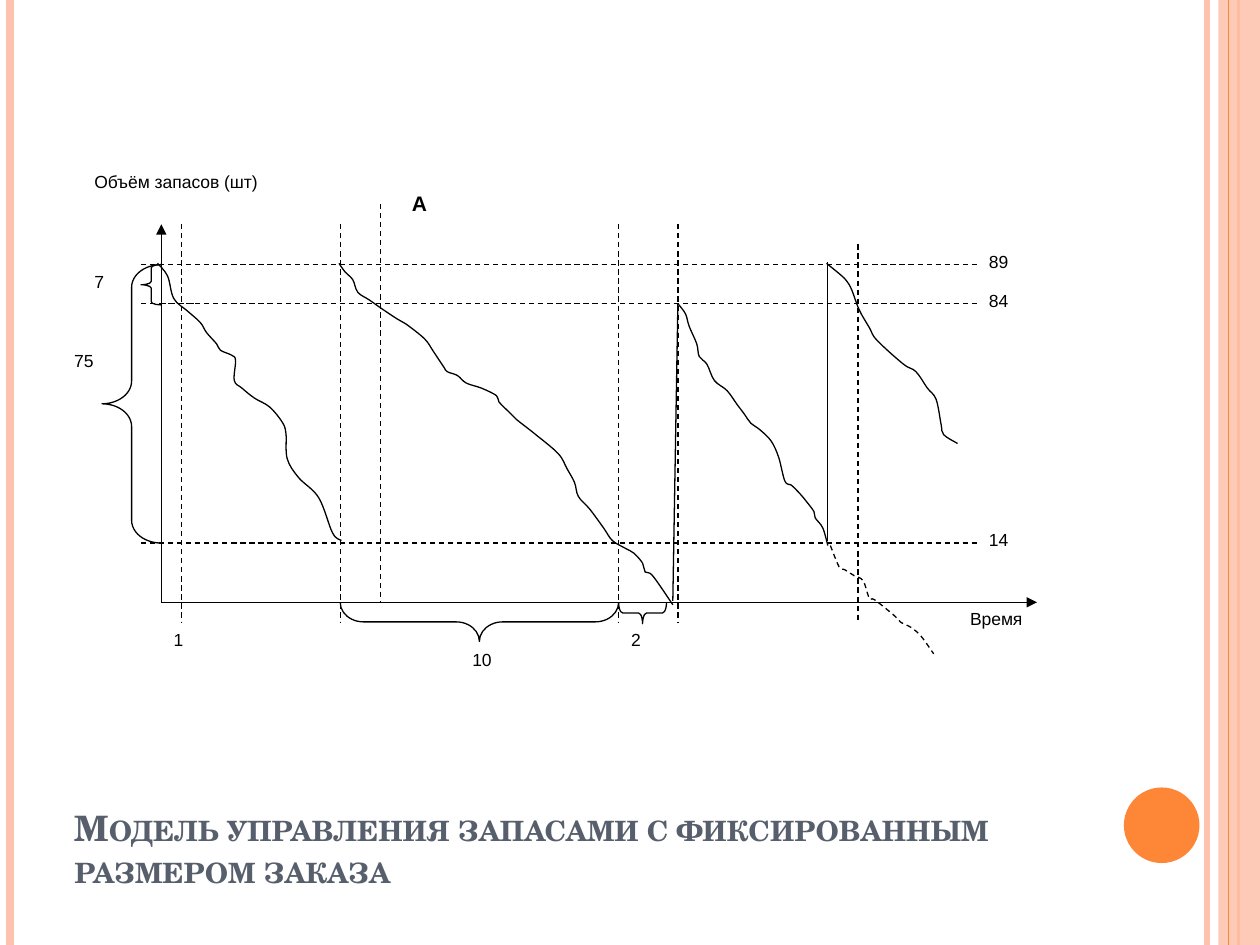
from dataclasses import dataclass

from lxml import etree
from pptx import Presentation
from pptx.dml.color import RGBColor
from pptx.enum import dml, shapes, text
from pptx.oxml import ns
from pptx.util import Inches, Pt

COLORS = {"ink": "000000", "title": "575F6D", "orange": "FE8637", "peach": "FEC3AE"}
Point = tuple[float, float]


@dataclass
class Line:
    start: Point
    end: Point
    color: str = "ink"
    width: float = 0.75
    dashed: bool = False
    arrow: bool = False


@dataclass
class Brace:
    left: float
    top: float
    width: float
    height: float
    curl: float
    points_down: bool = False


@dataclass
class Label:
    content: str
    left: float
    top: float
    width: float = 0.47
    height: float = 0.32
    size: int = 10
    bold: bool = False


@dataclass
class Curve:
    points: list[Point]
    dashed: bool = False


# Levels of the chart
BASE, REORDER, AFTER_ORDER, FULL = 4.78, 4.31, 2.41, 2.10
AXIS_X = 1.28

STRIPES = [
    Line((9.58, 0), (9.58, 7.5), "peach", 3),
    Line((0.08, 0), (0.08, 7.5), "peach", 4.5),
    Line((9.83, 0), (9.83, 7.5), "orange", 1.5),
]
AXES = [
    Line((AXIS_X, BASE), (AXIS_X, 1.78), arrow=True),
    Line((AXIS_X, BASE), (8.23, BASE), arrow=True),
]
VERTICALS = [(1.44, 1.78, 4.94), (2.7, 1.78, 4.94), (3.02, 1.62, BASE),
             (4.91, 1.78, 4.94), (5.38, 1.78, 4.94), (6.81, 1.94, 4.94)]
GUIDES = [Line((x, top), (x, bottom), dashed=True) for x, top, bottom in VERTICALS]
GUIDES += [Line((1.12, y), (7.75, y), dashed=True) for y in (REORDER, FULL, AFTER_ORDER)]
GUIDES.append(Line((AXIS_X, AFTER_ORDER), (1.59, AFTER_ORDER), dashed=True))
DELIVERIES = [Line((5.34, 4.77), (5.38, AFTER_ORDER)), Line((6.57, 4.29), (6.57, 2.08))]

BRACES = [
    Brace(0.81, FULL, 0.47, 2.21, 0.383),
    Brace(1.12, FULL, 0.16, 0.32, 0.165),
    Brace(2.7, BASE, 2.21, 0.31, 0.595, points_down=True),
    Brace(4.91, BASE, 0.38, 0.17, 0.191, points_down=True),
]

LABELS = [
    Label("7", 0.65, 2.1),
    Label("75", 0.49, 2.73, height=0.47),
    Label("10", 3.65, 5.1, height=0.47),
    Label("2", 4.91, 4.94, 0.32),
    Label("Время", 7.6, 4.78, 0.95),
    Label("Объём запасов (шт)", 0.65, 1.31, 2.37),
    Label("89", 7.75, 1.94),
    Label("84", 7.75, 2.25),
    Label("14", 7.75, 4.15),
    Label("A", 3.17, 1.46, height=0.47, size=12, bold=True),
    Label("1", 1.28, 4.94, 0.32),
]

CURVES = [
    Curve([(1.25, 2.09), (1.33, 2.19), (1.38, 2.37), (1.49, 2.47), (1.59, 2.56),
           (1.64, 2.64), (1.72, 2.73), (1.75, 2.78), (1.84, 2.82), (1.87, 2.86),
           (1.86, 3.02), (1.92, 3.08), (2.02, 3.16), (2.14, 3.23), (2.24, 3.35),
           (2.27, 3.44), (2.28, 3.64), (2.37, 3.79), (2.53, 3.95), (2.64, 4.23),
           (2.71, 4.29)]),
    Curve([(2.69, 2.09), (2.74, 2.16), (2.8, 2.22), (2.84, 2.32), (2.93, 2.38),
           (3.03, 2.45), (3.15, 2.53), (3.22, 2.57), (3.37, 2.69), (3.44, 2.79),
           (3.52, 2.91), (3.55, 2.95), (3.63, 2.98), (3.7, 3.04), (3.82, 3.08),
           (3.94, 3.14), (3.96, 3.19), (4.05, 3.28), (4.1, 3.33), (4.24, 3.44),
           (4.43, 3.6), (4.5, 3.72), (4.56, 3.83), (4.59, 3.94), (4.68, 4.04),
           (4.79, 4.19), (4.86, 4.29), (4.96, 4.35), (5.03, 4.39), (5.1, 4.47),
           (5.12, 4.54), (5.18, 4.57), (5.34, 4.8)]),
    Curve([(5.38, 2.41), (5.44, 2.49), (5.47, 2.59), (5.53, 2.73), (5.55, 2.83),
           (5.61, 2.89), (5.67, 3.02), (5.77, 3.1), (5.85, 3.21), (5.91, 3.29),
           (5.96, 3.36), (6.03, 3.41), (6.12, 3.5), (6.18, 3.63), (6.23, 3.82),
           (6.28, 3.85), (6.35, 3.92), (6.4, 3.98), (6.46, 4.06), (6.47, 4.11),
           (6.53, 4.19), (6.57, 4.33)]),
    Curve([(6.59, 4.33), (6.66, 4.5), (6.7, 4.52), (6.78, 4.57), (6.85, 4.61),
           (6.9, 4.75), (6.94, 4.76), (7.09, 4.88), (7.15, 4.94), (7.23, 4.98),
           (7.31, 5.05), (7.41, 5.19)], dashed=True),
    Curve([(6.56, 2.09), (6.67, 2.18), (6.72, 2.23), (6.76, 2.3), (6.82, 2.46),
           (6.9, 2.6), (6.96, 2.7), (7.17, 2.89), (7.27, 2.95), (7.36, 3.08),
           (7.43, 3.17), (7.47, 3.37), (7.49, 3.45), (7.6, 3.52)]),
]


def rgb(name: str) -> RGBColor:
    return RGBColor.from_string(COLORS[name])


def add_xml(parent, tag: str, **attributes: str) -> None:
    etree.SubElement(parent, ns.qn(tag), **attributes)


def style_line(shape, color: str = "ink", width: float = 0.75, dashed: bool = False) -> None:
    shape.line.color.rgb = rgb(color)
    shape.line.width = Pt(width)
    if dashed:
        shape.line.dash_style = dml.MSO_LINE.DASH


def draw_line(slide, line: Line) -> None:
    ends = [Inches(value) for value in (*line.start, *line.end)]
    connector = slide.shapes.add_connector(shapes.MSO_CONNECTOR.STRAIGHT, *ends)
    style_line(connector, line.color, line.width, line.dashed)
    if line.arrow:
        add_xml(connector.line._get_or_add_ln(), "a:tailEnd", type="triangle")
    add_xml(connector._element.spPr, "a:effectLst")


def draw_brace(slide, brace: Brace) -> None:
    """Place the brace by its visible frame, turning it when it points down."""
    width, height = brace.width, brace.height
    if brace.points_down:
        width, height = height, width
    left = brace.left + (brace.width - width) / 2
    top = brace.top + (brace.height - height) / 2
    shape = slide.shapes.add_shape(
        shapes.MSO_SHAPE.LEFT_BRACE, Inches(left), Inches(top), Inches(width), Inches(height))
    shape.adjustments[0] = brace.curl
    shape.rotation = 270 if brace.points_down else 0
    shape.shadow.inherit = False
    shape.fill.background()
    style_line(shape)


def bezier_points(points: list[Point]) -> list[Point]:
    """Give two control points and an end for each smooth segment."""
    padded = [points[0], *points, points[-1]]
    result = []
    for a, b, c, d in zip(padded, padded[1:], padded[2:], padded[3:]):
        result.append(tuple(q + (r - p) / 6 for p, q, r in zip(a, b, c)))
        result.append(tuple(r - (s - q) / 6 for q, r, s in zip(b, c, d)))
        result.append(c)
    return result


def draw_curve(slide, curve: Curve) -> None:
    start, *rest = [(Inches(x), Inches(y))
                    for x, y in [curve.points[0], *bezier_points(curve.points)]]
    builder = slide.shapes.build_freeform(*start)
    builder.add_line_segments(rest, close=False)
    shape = builder.convert_to_shape()
    segments = shape._element.findall(".//" + ns.qn("a:lnTo"))
    for index in range(0, len(segments), 3):
        first, *others = segments[index:index + 3]
        first.tag = ns.qn("a:cubicBezTo")
        for other in others:
            first.append(other[0])
            other.getparent().remove(other)
    shape.shadow.inherit = False
    shape.fill.background()
    style_line(shape, dashed=curve.dashed)


def draw_label(slide, label: Label) -> None:
    box = slide.shapes.add_textbox(
        Inches(label.left), Inches(label.top), Inches(label.width), Inches(label.height))
    box.text_frame.word_wrap = True
    run = box.text_frame.paragraphs[0].add_run()
    run.text = label.content
    run.font.name, run.font.size, run.font.bold = "Arial", Pt(label.size), label.bold
    run.font.color.rgb = rgb("ink")


def draw_filled(slide, kind, color: str, left: float, top: float, width: float, height: float):
    shape = slide.shapes.add_shape(
        kind, Inches(left), Inches(top), Inches(width), Inches(height))
    shape.shadow.inherit = False
    shape.fill.solid()
    shape.fill.fore_color.rgb = rgb(color)
    shape.line.fill.background()
    return shape


def draw_title(slide, content: str) -> None:
    title = slide.shapes.title
    title.left, title.top = Inches(0.49), Inches(5.87)
    title.width, title.height = Inches(8.68), Inches(1.25)
    frame = title.text_frame
    frame.word_wrap, frame.auto_size = True, text.MSO_AUTO_SIZE.NONE
    frame.vertical_anchor = text.MSO_ANCHOR.BOTTOM
    paragraph = frame.paragraphs[0]
    paragraph.alignment = text.PP_ALIGN.LEFT
    run = paragraph.add_run()
    run.text = content
    run.font.name, run.font.size, run.font.bold = "TeX Gyre Schola", Pt(20), True
    run.font.color.rgb = rgb("title")
    run._r.get_or_add_rPr().set("cap", "small")


def main() -> None:
    presentation = Presentation()
    presentation.slide_width, presentation.slide_height = Inches(10), Inches(7.5)
    slide = presentation.slides.add_slide(presentation.slide_layouts[5])
    for line in STRIPES:
        draw_line(slide, line)
    band = draw_filled(slide, shapes.MSO_SHAPE.RECTANGLE, "peach", 9.67, 0, 0.33, 7.5)
    add_xml(band._element.spPr.find(".//" + ns.qn("a:srgbClr")), "a:alpha", val="87000")
    draw_line(slide, Line((9.75, 0), (9.75, 7.5), "orange"))
    draw_filled(slide, shapes.MSO_SHAPE.OVAL, "orange", 8.92, 6.25, 0.6, 0.6)
    draw_title(slide, "Модель управления запасами с фиксированным размером заказа")
    for draw, items in ((draw_line, AXES + GUIDES), (draw_brace, BRACES),
                        (draw_curve, CURVES), (draw_line, DELIVERIES), (draw_label, LABELS)):
        for item in items:
            draw(slide, item)
    presentation.save("out.pptx")


if __name__ == "__main__":
    main()
